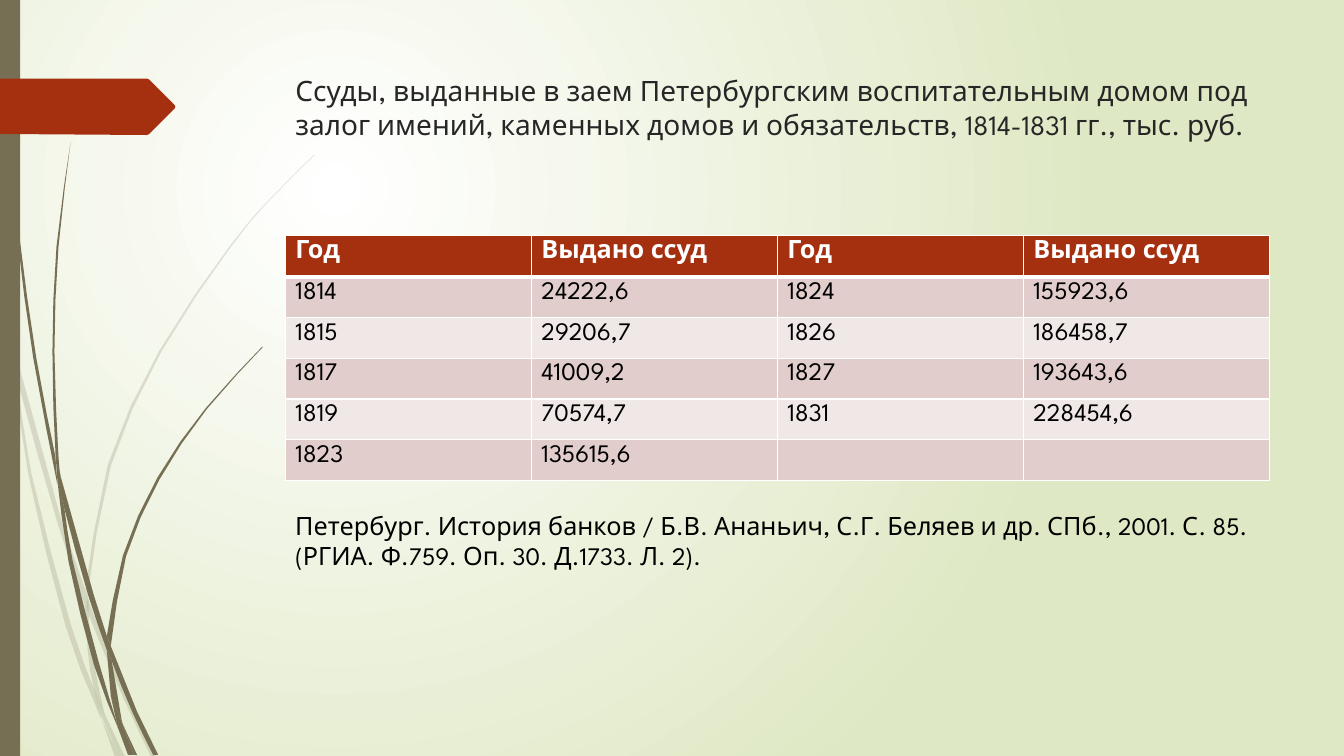
import pptx
import pptx.dml.color
import pptx.enum.shapes
import pptx.enum.text
import pptx.oxml
import pptx.oxml.ns
import pptx.util
from pptx.util import Inches

FONT = "League Spartan"
OLIVE, RUST, WHITE, BLACK = "766F54", "A53010", "FFFFFF", "000000"
BANDS = ("E1CDCC", "F0E8E7")
NAMESPACE = pptx.oxml.ns.nsdecls("a")

TITLE = ("Ссуды, выданные в заем Петербургским воспитательным домом под залог имений, "
         "каменных домов и обязательств, 1814-1831 гг., тыс. руб.")
SOURCE = ("Петербург. История банков / Б.В. Ананьич, С.Г. Беляев и др. СПб., 2001. С. 85. "
          "(РГИА. Ф.759. Оп. 30. Д.1733. Л. 2).")
LOANS = [
    ("Год", "Выдано ссуд", "Год", "Выдано ссуд"),
    ("1814", "24222,6", "1824", "155923,6"),
    ("1815", "29206,7", "1826", "186458,7"),
    ("1817", "41009,2", "1827", "193643,6"),
    ("1819", "70574,7", "1831", "228454,6"),
    ("1823", "135615,6", "", ""),
]

PALE_BLADES = [
    ([(0, 2.99), (0.1, 3.44), (0.11, 3.5)], [(0, 2.82), (0.09, 3.22), (0.11, 3.5)]),
    ([(0.14, 3.45), (0.17, 3.76), (0.58, 5.22), (0.84, 5.99)],
     [(0.14, 3.45), (0.62, 5.2), (0.85, 5.86)]),
    ([(0.88, 5.96), (0.88, 6.1), (1.23, 6.94), (1.5, 7.51)],
     [(0.88, 5.96), (0.92, 6.07), (1.27, 6.92), (1.55, 7.51)]),
    ([(1.05, 7.11), (1.19, 7.51)], [(1.05, 7.11), (1.24, 7.51)]),
    ([(0.11, 3.5), (0.28, 4.7), (0.65, 6.21), (0.92, 6.93), (1.01, 7.14)],
     [(0.11, 3.5), (0.17, 3.76), (0.31, 4.69), (0.7, 6.19), (0.93, 6.83), (0.99, 7.07)]),
    ([(0.84, 5.99), (0.87, 6.46), (0.93, 6.83), (1.05, 7.11)],
     [(0.84, 5.99), (0.88, 6.1), (0.91, 6.46), (1.03, 7.06)]),
    ([(3.12, 1.53), (2.68, 1.97), (2.28, 2.44), (1.58, 3.48), (1.07, 4.61), (0.85, 5.84)],
     [(3.12, 1.54), (2.68, 1.98), (2.29, 2.45), (1.6, 3.49), (1.1, 4.62), (0.88, 5.84),
      (0.88, 5.96)]),
    ([(1.01, 7.14), (1.14, 7.51)], [(1.01, 7.14), (1.19, 7.51)]),
    ([(0.85, 5.86), (0.84, 5.99)], [(0.88, 5.96), (0.88, 6.1)]),
    ([(0.93, 6.83), (0.99, 7.07), (1.19, 7.51)], [(0.93, 6.83), (1.05, 7.11), (1.19, 7.51)]),
]
DARK_BLADES = [
    ([(0.03, 0), (0.07, 1.1), (0.17, 2.33), (0.33, 3.55), (0.57, 4.81)],
     [(0.04, 0), (0.08, 1.09), (0.19, 2.32), (0.36, 3.55), (0.55, 4.53)]),
    ([(0.6, 4.72), (0.64, 5.05), (0.88, 5.92), (1.06, 6.45)],
     [(0.6, 4.72), (0.93, 5.9), (1.06, 6.31)]),
    ([(1.1, 6.41), (1.11, 6.56), (1.32, 7.08), (1.52, 7.49)],
     [(1.1, 6.41), (1.36, 7.06), (1.57, 7.49)]),
    ([(0.57, 4.77), (0.68, 5.57), (0.93, 6.59), (1.17, 7.22)],
     [(0.57, 4.77), (0.64, 5.05), (0.72, 5.56), (0.98, 6.57), (1.16, 7.17)]),
    ([(0.7, 1.41), (0.56, 2.45), (0.52, 3.49), (0.55, 4.49), (0.6, 4.72)],
     [(0.7, 1.41), (0.58, 2.45), (0.54, 3.49), (0.58, 4.53), (0.6, 4.72)]),
    ([(1.22, 7.19), (1.33, 7.49)], [(1.22, 7.19), (1.36, 7.49)]),
    ([(0.55, 4.49), (0.57, 4.77)], [(0.6, 4.72), (0.64, 5.05)]),
    ([(2.6, 3.44), (2.04, 4.05), (1.56, 4.74), (1.22, 5.51), (1.06, 6.31)],
     [(2.61, 3.44), (2.05, 4.06), (1.58, 4.76), (1.25, 5.52), (1.11, 6.33), (1.1, 6.41)]),
    ([(1.17, 7.22), (1.27, 7.49)], [(1.17, 7.22), (1.31, 7.49)]),
    ([(1.06, 6.45), (1.1, 6.91), (1.22, 7.19)], [(1.06, 6.45), (1.11, 6.56), (1.21, 7.16)]),
    ([(1.06, 6.31), (1.06, 6.45)], [(1.1, 6.41), (1.11, 6.56)]),
    ([(1.1, 6.91), (1.17, 7.22), (1.3, 7.49)], [(1.1, 6.91), (1.22, 7.19), (1.33, 7.49)]),
]
ARROW = [(0, 0), (1.46, 0), (1.48, 0.01), (1.73, 0.26), (1.74, 0.28), (1.73, 0.3),
         (1.48, 0.55), (1.46, 0.56), (0, 0.55)]


def color(value):
    """Return the colour for a hex string."""
    return pptx.dml.color.RGBColor.from_string(value)


def set_font(para, size, value, bold=False):
    """Format a whole paragraph."""
    para.font.name, para.font.size = FONT, pptx.util.Pt(size)
    para.font.bold, para.font.color.rgb = bold, color(value)


def paint(shape, value, opacity=100):
    """Give a shape a plain fill without line or shadow."""
    shape.shadow.inherit = False
    shape.line.fill.background()
    shape.fill.solid()
    shape.fill.fore_color.rgb = color(value)
    if opacity < 100:
        tint = shape.fill._xPr.find(".//" + pptx.oxml.ns.qn("a:srgbClr"))
        tint.append(pptx.oxml.parse_xml(f'<a:alpha {NAMESPACE} val="{opacity * 1000}"/>'))


def smooth_edge(knots):
    """Return the knots with a curved midpoint between long-edge neighbours."""
    if len(knots) < 4:
        return knots
    padded = [knots[0], *knots, knots[-1]]
    points = []
    for before, start, end, after in zip(padded, padded[1:], padded[2:], padded[3:]):
        middle = tuple((9 * (b + c) - a - d) / 16
                       for a, b, c, d in zip(before, start, end, after))
        points += [start, middle]
    return points + [knots[-1]]


def add_outline(shapes, left, top, points, value, opacity=100):
    """Draw a closed outline from points relative to a corner."""
    placed = [(Inches(left + x), Inches(top + y)) for x, y in points]
    builder = shapes.build_freeform(*placed[0])
    builder.add_line_segments(placed[1:], close=True)
    paint(builder.convert_to_shape(), value, opacity)


def add_background(page):
    """Fill the page with a radial gradient centred in its upper left."""
    fill = page.background.fill
    fill.gradient()
    for stop, value in zip(fill.gradient_stops, (WHITE, "DFE8C4")):
        stop.color.rgb = color(value)
    gradient = fill._xPr.find(pptx.oxml.ns.qn("a:gradFill"))
    linear = gradient.find(pptx.oxml.ns.qn("a:lin"))
    gradient.replace(linear, pptx.oxml.parse_xml(
        f'<a:path {NAMESPACE} path="circle">'
        '<a:fillToRect l="25000" t="25000" r="75000" b="75000"/></a:path>'))


def add_decoration(page, left, top, height):
    """Draw the grass blades, the side strip and the arrow tab."""
    for blades, opacity in ((PALE_BLADES, 20), (DARK_BLADES, 100)):
        tuft = page.shapes.add_group_shape()
        for near, far in blades:
            outline = smooth_edge(near) + smooth_edge(far)[::-1]
            add_outline(tuft.shapes, left, top, outline, OLIVE, opacity)
    strip = page.shapes.add_shape(pptx.enum.shapes.MSO_SHAPE.RECTANGLE, Inches(left),
                                  Inches(top), Inches(0.2), Inches(height))
    paint(strip, OLIVE)
    add_outline(page.shapes, left, top + 0.78, ARROW, RUST)


def write_text(shape, text, size, value):
    """Write one left-aligned paragraph at the top of a shape."""
    frame = shape.text_frame
    frame.word_wrap = True
    frame.auto_size = pptx.enum.text.MSO_AUTO_SIZE.NONE
    frame.vertical_anchor = pptx.enum.text.MSO_ANCHOR.TOP
    frame.text = text
    para = frame.paragraphs[0]
    para.alignment = pptx.enum.text.PP_ALIGN.LEFT
    set_font(para, size, value)


def add_title(page, left, top, width, height):
    """Place and write the title."""
    title = page.shapes.title
    title.left, title.top = Inches(left), Inches(top)
    title.width, title.height = Inches(width), Inches(height)
    write_text(title, TITLE, 20, "262626")


def set_borders(cell, bottom, top):
    """Draw white borders round a cell."""
    properties = cell._tc.get_or_add_tcPr()
    for index, (side, points) in enumerate((("L", 1), ("R", 1), ("T", top), ("B", bottom))):
        properties.insert(index, pptx.oxml.parse_xml(
            f'<a:ln{side} {NAMESPACE} w="{points * 12700}"><a:solidFill>'
            f'<a:srgbClr val="{WHITE}"/></a:solidFill></a:ln{side}>'))


def add_loans(page, left, top, width, height):
    """Build the table of loans by year."""
    table = page.shapes.add_table(len(LOANS), len(LOANS[0]), Inches(left), Inches(top),
                                  Inches(width), Inches(height)).table
    for row, values in enumerate(LOANS):
        header = row == 0
        for column, value in enumerate(values):
            cell = table.cell(row, column)
            cell.text = value
            set_font(cell.text_frame.paragraphs[0], 18, WHITE if header else BLACK, header)
            cell.fill.solid()
            cell.fill.fore_color.rgb = color(RUST if header else BANDS[(row - 1) % 2])
            set_borders(cell, 3 if header else 1, 3 if row == 1 else 1)


def add_source(page, left, top, width, height):
    """Write the reference below the table."""
    box = page.shapes.add_textbox(Inches(left), Inches(top), Inches(width), Inches(height))
    write_text(box, SOURCE, 18, BLACK)
    box.text_frame.auto_size = pptx.enum.text.MSO_AUTO_SIZE.SHAPE_TO_FIT_TEXT


def main():
    """Build and save the deck."""
    deck = pptx.Presentation()
    deck.slide_width, deck.slide_height = Inches(13.33), Inches(7.5)
    page = deck.slides.add_slide(deck.slide_layouts[5])
    add_background(page)
    add_decoration(page, 0, 0, 7.5)
    add_title(page, 2.83, 0.68, 9.75, 1.4)
    add_loans(page, 2.83, 2.34, 9.76, 2.43)
    add_source(page, 2.83, 5.01, 10.03, 0.71)
    deck.save("out.pptx")


if __name__ == "__main__":
    main()
